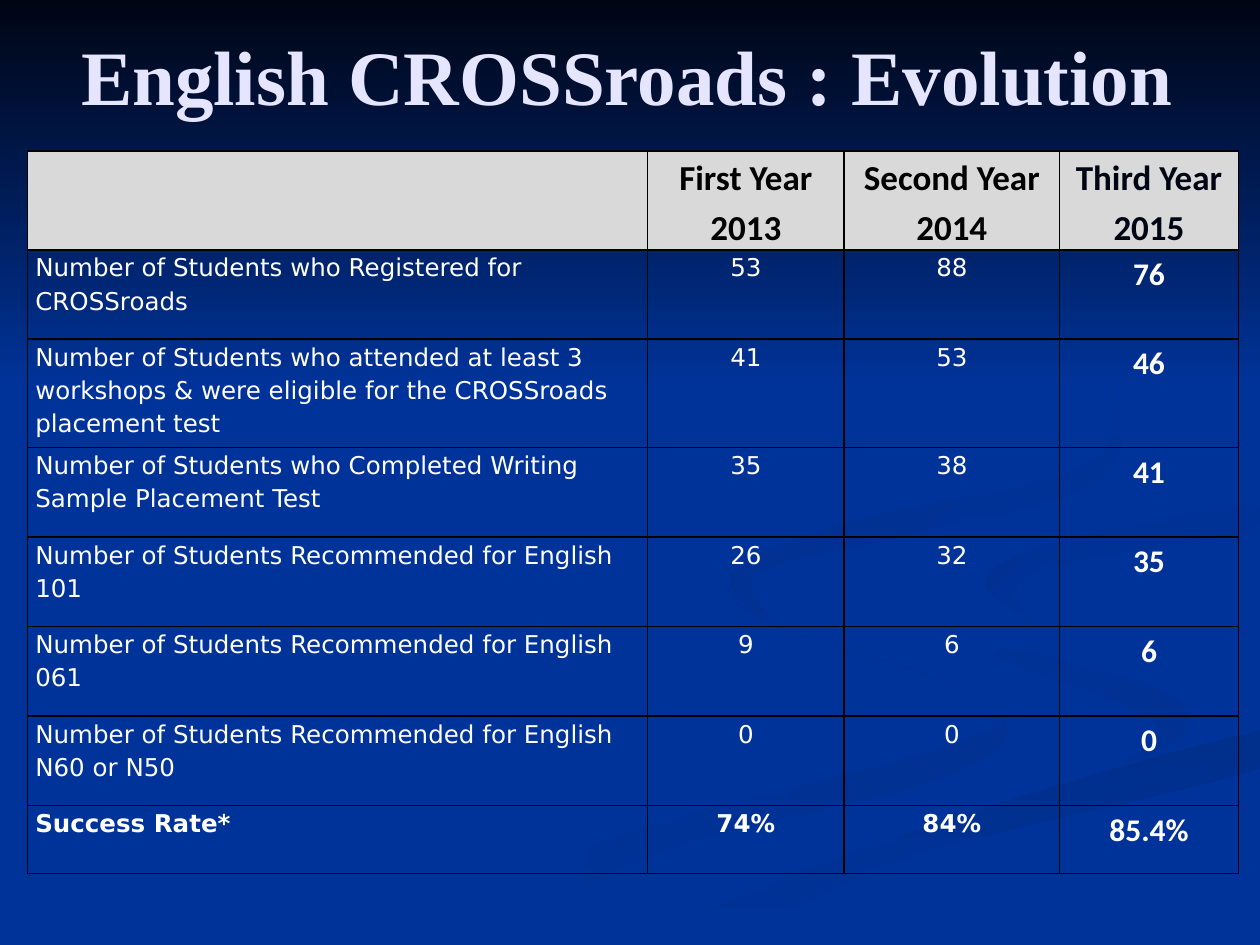
from lxml.etree import SubElement
from pptx import Presentation
from pptx.dml.color import RGBColor
from pptx.enum.text import MSO_ANCHOR, PP_ALIGN
from pptx.oxml.ns import qn
from pptx.util import Inches, Pt

BLUE = "003399"
NAVY = "000514"
WHITE = "FFFFFF"
BLACK = "000000"
GREY = "D9D9D9"
BODY_FONT = "DejaVu Sans"
ACCENT_FONT = "Calibri"
CURVE_STEPS = 5

SWOOSHES = [
    (BLUE, "003193", 0, [
        (5.75, 4.6), (6.1, 4.95), (7.5, 5.4), (8, 5.8), (7.4, 6.2), (5.3, 6.75),
        (3.6, 7.5), (3, 7.5), (5, 6.6), (7.6, 5.9), (7.8, 5.55), (6, 4.9)]),
    (BLUE, "003193", 45, [
        (7.25, 4.65), (7.75, 5.03), (9.2, 5.47), (9.4, 5.8), (8.95, 6.05), (9.15, 5.7), (7.8, 5.18)]),
    ("002F8C", BLUE, 90, [
        (10, 5.8), (10, 6.1), (7.2, 6.8), (5.7, 7.5), (5, 7.5), (7.3, 6.58)]),
    ("003091", BLUE, 45, [
        (8.25, 4.95), (7.8, 4.6), (8.5, 4.27), (10, 4), (10, 4.2), (8.4, 4.48), (8.05, 4.72)]),
    ("002F8E", BLUE, 45, [
        (7.6, 2.35), (8.75, 3), (8.75, 3.8), (7.4, 4.2), (6, 4.55), (6.2, 5),
        (5.8, 4.55), (6.8, 4.13), (8.6, 3.7), (8.75, 3.05)]),
]

HEADINGS = [("First Year", "2013"), ("Second Year", "2014"), ("Third Year", "2015")]
RESULTS = [
    ("Number of Students who Registered for CROSSroads", "53", "88", "76"),
    ("Number of Students who attended at least 3 workshops & were eligible for the "
     "CROSSroads placement test", "41", "53", "46"),
    ("Number of Students who Completed Writing Sample Placement Test", "35", "38", "41"),
    ("Number of Students Recommended for English 101", "26", "32", "35"),
    ("Number of Students Recommended for English 061", "9", "6", "6"),
    ("Number of Students Recommended for English N60 or N50", "0", "0", "0"),
    ("Success Rate*", "74%", "84%", "85.4%"),
]
COLUMN_WIDTHS = [4.92, 1.56, 1.71, 1.42]
ROW_HEIGHTS = [0.78, 0.71, 0.86] + [0.71] * 4 + [0.54]


def colour(value):
    """Turn a hex string into a colour."""
    return RGBColor.from_string(value)


def add_run(para, text, size, font, shade, bold):
    """Add one formatted run to a paragraph."""
    span = para.add_run()
    span.text = text
    span.font.size = Pt(size)
    span.font.name = font
    span.font.bold = bold
    span.font.color.rgb = colour(shade)


def smooth(knots):
    """Run a closed spline through the knots, kept inside the slide."""
    curve = []
    for index in range(len(knots)):
        quad = [knots[(index + shift) % len(knots)] for shift in (-1, 0, 1, 2)]
        for step in range(CURVE_STEPS):
            t = step / CURVE_STEPS
            x, y = (b + t * (c - a + t * (2 * a - 5 * b + 4 * c - d + t * (3 * (b - c) + d - a))) / 2
                    for a, b, c, d in zip(*quad))
            curve.append((Inches(min(x, 10)), Inches(min(y, 7.5))))
    return curve


def shade_shape(page, shape, first, last, angle):
    """Give a shape a gradient and put it behind the title."""
    shape.shadow.inherit = False
    shape.line.fill.background()
    shape.fill.gradient()
    shape.fill.gradient_angle = (360 - angle) % 360
    for stop, shade in zip(shape.fill.gradient_stops, (first, last)):
        stop.color.rgb = colour(shade)
    page.shapes.title.element.addprevious(shape.element)


def add_backdrop(page, left, top, width, height):
    """Draw the swooshes, then the dark band in the given box."""
    for first, last, angle, knots in SWOOSHES:
        points = smooth(knots)
        builder = page.shapes.build_freeform(*points[0], scale=1.0)
        builder.add_line_segments(points[1:], close=True)
        shade_shape(page, builder.convert_to_shape(), first, last, angle)
    builder = page.shapes.build_freeform(left, top, scale=1.0)
    right, bottom = left + width, top + height
    builder.add_line_segments([(left, bottom), (right, bottom), (right, top)], close=True)
    shade_shape(page, builder.convert_to_shape(), NAVY, BLUE, 90)


def add_title(page, left, top, width, height):
    """Place the title in the given box."""
    title = page.shapes.title
    title.left, title.top, title.width, title.height = left, top, width, height
    title.text_frame.vertical_anchor = MSO_ANCHOR.MIDDLE
    para = title.text_frame.paragraphs[0]
    para.alignment = PP_ALIGN.CENTER
    add_run(para, "English CROSSroads : Evolution", 44, "Times New Roman", "E5E5FF", True)


def format_cell(cell, fill=None):
    """Set the margins, black borders and fill of a cell."""
    cell.margin_left = cell.margin_right = Inches(0.06)
    cell.margin_top = cell.margin_bottom = 0
    properties = cell._tc.get_or_add_tcPr()
    for side in ("a:lnL", "a:lnR", "a:lnT", "a:lnB"):
        line = SubElement(properties, qn(side), w=str(Pt(1)))
        solid = SubElement(line, qn("a:solidFill"))
        SubElement(solid, qn("a:srgbClr"), val=BLACK)
    if fill:
        cell.fill.solid()
        cell.fill.fore_color.rgb = colour(fill)
    else:
        cell.fill.background()


def fill_cell(cell, lines, align, *style):
    """Write one paragraph for each line of a cell."""
    frame = cell.text_frame
    for index, text in enumerate(lines):
        para = frame.add_paragraph() if index else frame.paragraphs[0]
        para.alignment = align
        para.line_spacing = 1.15
        add_run(para, text, *style)


def add_results(page, left, top, width, height):
    """Build the table of results by year in the given box."""
    frame = page.shapes.add_table(len(ROW_HEIGHTS), len(COLUMN_WIDTHS), left, top, width, height)
    table = frame.table
    table.first_row = table.horz_banding = False
    for column, size in zip(table.columns, COLUMN_WIDTHS):
        column.width = Inches(size)
    for row, size in zip(table.rows, ROW_HEIGHTS):
        row.height = Inches(size)
    format_cell(table.cell(0, 0), GREY)
    for number, lines in enumerate(HEADINGS, 1):
        cell = table.cell(0, number)
        format_cell(cell, GREY)
        shade = NAVY if number == len(HEADINGS) else BLACK
        fill_cell(cell, lines, PP_ALIGN.CENTER, 20, ACCENT_FONT, shade, True)
    for row, values in enumerate(RESULTS, 1):
        for number, text in enumerate(values):
            cell = table.cell(row, number)
            format_cell(cell)
            latest = number == len(HEADINGS)
            size, font = (18, ACCENT_FONT) if latest else (14, BODY_FONT)
            align = PP_ALIGN.CENTER if number else PP_ALIGN.LEFT
            fill_cell(cell, [text], align, size, font, WHITE, latest or row == len(RESULTS))


def main():
    """Build the slide and save the deck."""
    deck = Presentation()
    deck.slide_width, deck.slide_height = Inches(10), Inches(7.5)
    page = deck.slides.add_slide(deck.slide_layouts[5])
    page.background.fill.solid()
    page.background.fill.fore_color.rgb = colour(BLUE)
    add_backdrop(page, 0, 0, Inches(10), Inches(3.08))
    add_title(page, Inches(0.48), Inches(0.17), Inches(9), Inches(0.85))
    add_results(page, Inches(0.22), Inches(1.2), Inches(9.6), Inches(5.74))
    deck.save("out.pptx")


if __name__ == "__main__":
    main()
